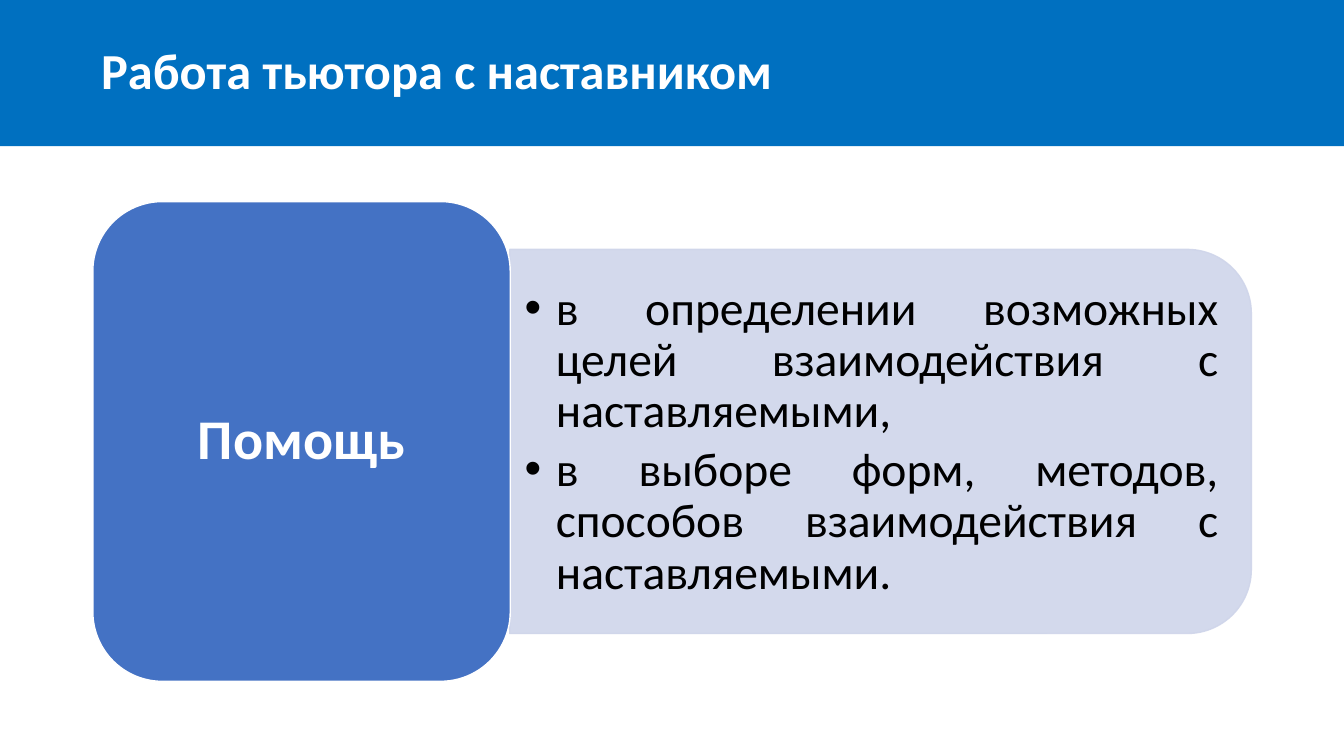
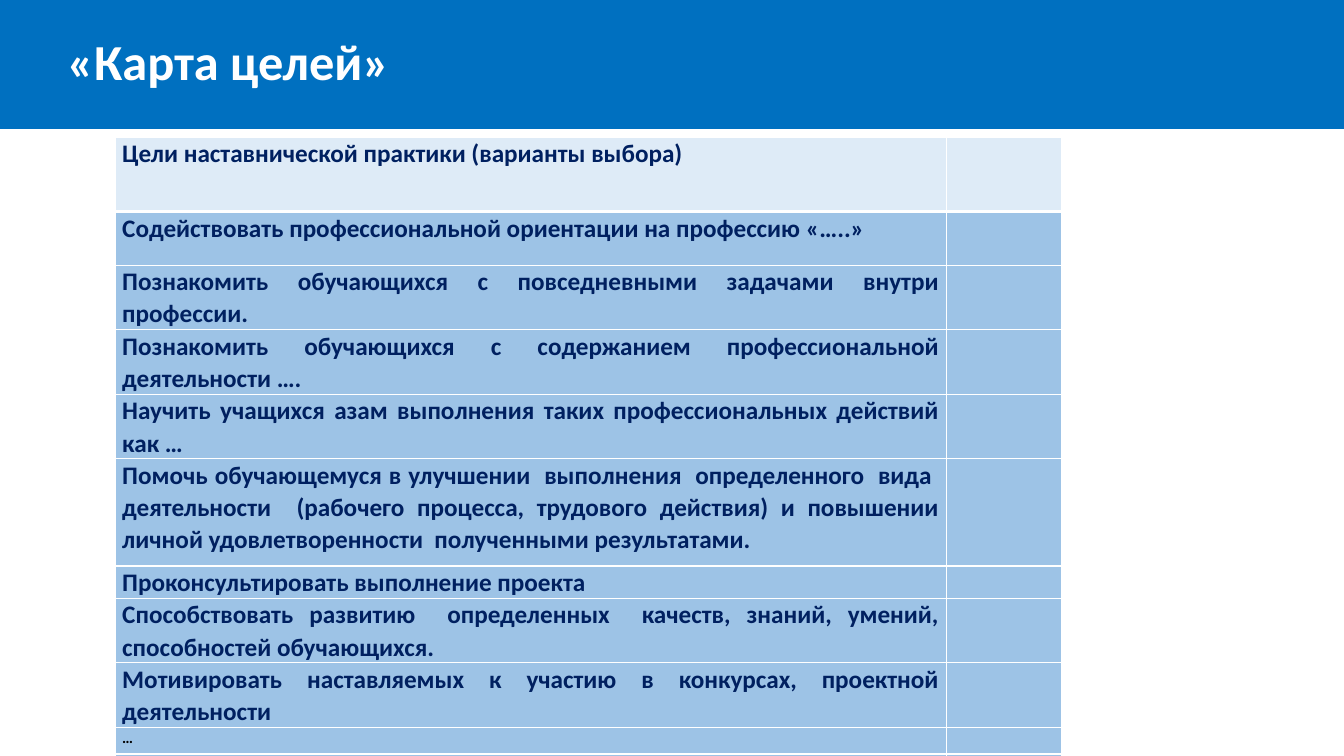
import pptx
import pptx.dml.color
import pptx.enum.shapes
import pptx.enum.text
import pptx.oxml.ns
import pptx.util
from lxml import etree

Cm = pptx.util.Cm
Pt = pptx.util.Pt
hue = pptx.dml.color.RGBColor.from_string
qn = pptx.oxml.ns.qn
Kind = pptx.enum.shapes.MSO_SHAPE
Align = pptx.enum.text.PP_ALIGN
MIDDLE = pptx.enum.text.MSO_ANCHOR.MIDDLE

FONT = "Calibri"
WHITE, BLACK, NAVY = "FFFFFF", "000000", "002060"
BAND, BLUE, PALE = "0070C0", "4472C4", "CFD5EA"
HEAD, BODY = "DEEBF7", "9DC3E6"
WIDE = Cm(33.87)

deck = pptx.Presentation()
deck.slide_width, deck.slide_height = WIDE, Cm(19.05)


def write(par, text, size, color, bold, align, gap):
    """Add one styled run to a paragraph and set its alignment and line spacing."""
    par.alignment, par.line_spacing = align, gap
    run = par.add_run()
    run.text = text
    run.font.name, run.font.size, run.font.bold = FONT, Pt(size), bold
    run.font.color.rgb = hue(color)


def start(text, height, indent):
    """Add a slide whose title is a full-width blue band."""
    slide = deck.slides.add_slide(deck.slide_layouts[5])
    title = slide.shapes.title
    title.left, title.top, title.width, title.height = 0, 0, WIDE, Cm(height)
    title.fill.solid()
    title.fill.fore_color.rgb = hue(BAND)
    frame = title.text_frame
    frame.auto_size = pptx.enum.text.MSO_AUTO_SIZE.NONE
    frame.vertical_anchor = MIDDLE
    frame.margin_left = Cm(indent)
    write(frame.paragraphs[0], text, 36, WHITE, True, Align.LEFT, 0.9)
    return slide


# Slide 1: help for the mentor
slide = start("Работа тьютора с наставником", 3.68, 2.55)

# The panel is turned a quarter so that its round corners face right
panel = slide.shapes.add_shape(
    Kind.ROUND_2_SAME_RECTANGLE, Cm(17.35), Cm(1.78), Cm(9.68), Cm(18.69))
panel.rotation = 90
block = slide.shapes.add_shape(
    Kind.ROUNDED_RECTANGLE, Cm(2.34), Cm(5.08), Cm(10.52), Cm(12.09))
for shape, fill, line in (panel, PALE, PALE), (block, BLUE, WHITE):
    shape.shadow.inherit = False
    shape.fill.solid()
    shape.fill.fore_color.rgb = hue(fill)
    shape.line.color.rgb = hue(line)
    shape.line.width = Pt(1)
for color in panel.fill._xPr.iter(qn("a:srgbClr")):
    etree.SubElement(color, qn("a:alpha"), val="90000")

block.text_frame.vertical_anchor = MIDDLE
write(block.text_frame.paragraphs[0], "Помощь", 40, WHITE, True, Align.CENTER, 0.9)

box = slide.shapes.add_textbox(Cm(12.86), Cm(6.76), Cm(18.21), Cm(8.74))
frame = box.text_frame
frame.word_wrap = True
frame.vertical_anchor = MIDDLE
frame.margin_left = frame.margin_right = Cm(0.36)
frame.margin_top = frame.margin_bottom = Cm(0.18)
points = [
    "в определении возможных целей взаимодействия с наставляемыми,",
    "в выборе форм, методов, способов взаимодействия с наставляемыми.",
]
for i, text in enumerate(points):
    par = frame.add_paragraph() if i else frame.paragraphs[0]
    write(par, text, 34, BLACK, False, Align.JUSTIFY, 0.9)
    par.space_after = Pt(5)
    props = par._p.get_or_add_pPr()
    props.set("marL", str(Cm(0.79)))
    props.set("indent", str(-Cm(0.79)))
    etree.SubElement(props, qn("a:buFont"), typeface="Arial")
    etree.SubElement(props, qn("a:buChar"), char="•")

# Slide 2: table of goals
slide = start("«Карта целей»", 3.25, 1.69)
goals = [
    ("Цели наставнической практики (варианты выбора)", 1.88),
    ("Содействовать профессиональной ориентации на профессию «…..»", 1.35),
    ("Познакомить обучающихся с повседневными задачами внутри профессии.", 1.35),
    ("Познакомить обучающихся с содержанием профессиональной деятельности ….", 1.35),
    ("Научить учащихся азам выполнения таких профессиональных действий как …", 1.35),
    ("Помочь обучающемуся в улучшении  выполнения  определенного  вида  "
     "деятельности  (рабочего процесса, трудового действия) и повышении "
     "личной удовлетворенности  полученными результатами.", 2.7),
    ("Проконсультировать выполнение проекта", 0.67),
    ("Способствовать развитию  определенных  качеств, знаний, умений, "
     "способностей обучающихся.", 1.52),
    ("Мотивировать наставляемых к участию в конкурсах, проектной деятельности", 1.35),
    ("…", 0.67),
    ("…", 0.67),
]
cols = [20.95, 2.9]
total = sum(height for _, height in goals)
table = slide.shapes.add_table(
    len(goals), len(cols), Cm(2.9), Cm(3.45), Cm(sum(cols)), Cm(total)).table
for col, width in zip(table.columns, cols):
    col.width = Cm(width)

for i, (text, height) in enumerate(goals):
    row = table.rows[i]
    row.height = Cm(height)
    for cell in row.cells:
        cell.margin_left = cell.margin_right = Cm(0.18)
        cell.margin_top = cell.margin_bottom = 0
        for side in "LRTB":
            thick = (i == 0 and side == "B") or (i == 1 and side == "T")
            line = etree.SubElement(cell._tc.get_or_add_tcPr(), qn("a:ln" + side),
                                    w=str(Pt(3 if thick else 1)))
            fill = etree.SubElement(line, qn("a:solidFill"))
            etree.SubElement(fill, qn("a:srgbClr"), val=WHITE)
        cell.fill.solid()
        cell.fill.fore_color.rgb = hue(BODY if i else HEAD)
    goal, mark = row.cells
    size, color = (11, BLACK) if text == "…" else (18, NAVY)
    write(goal.text_frame.paragraphs[0], text, size, color, True, Align.JUSTIFY, 1.05)
    # A small end mark keeps the empty cell from stretching its row
    etree.SubElement(mark.text_frame.paragraphs[0]._p, qn("a:endParaRPr"), sz="1100")

deck.save("out.pptx")
